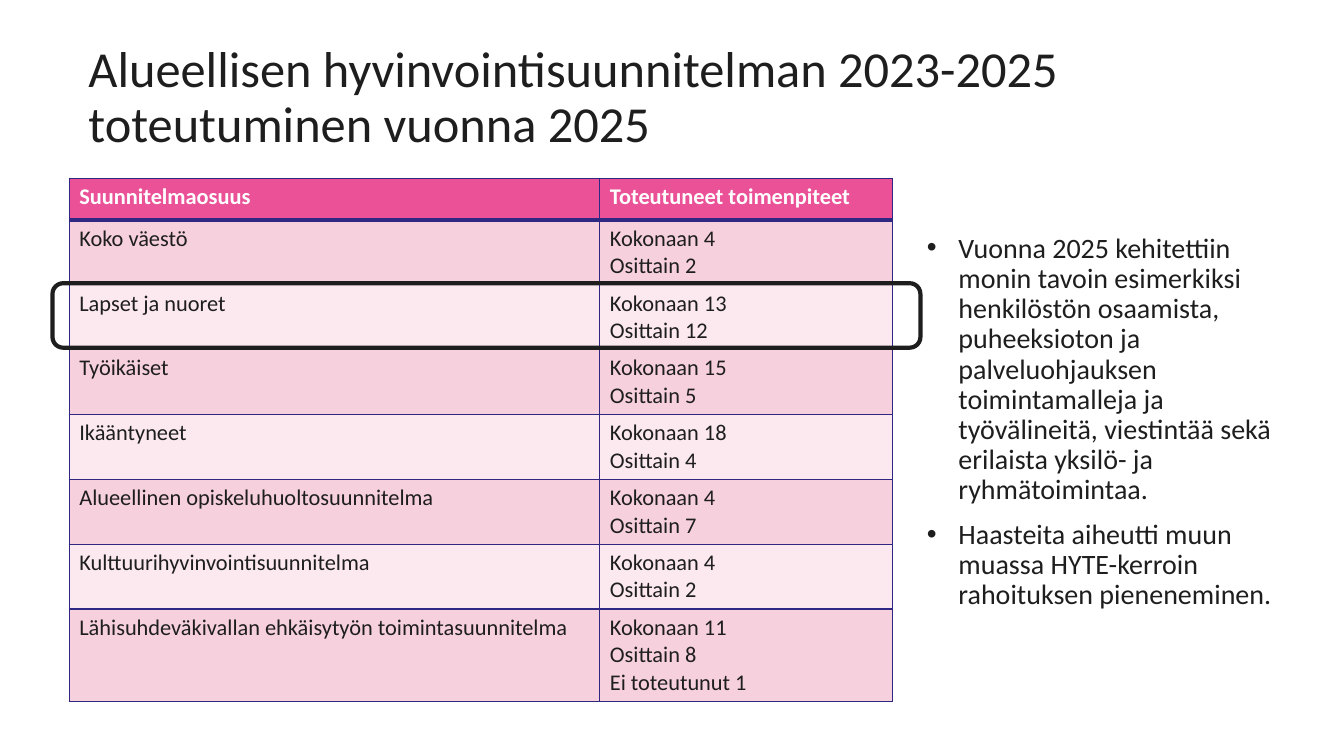
from lxml import etree
from pptx import Presentation
from pptx.dml.color import RGBColor
from pptx.enum.shapes import MSO_SHAPE as Shape
from pptx.enum.text import MSO_ANCHOR as Anchor, PP_ALIGN as Align
from pptx.oxml import parse_xml
from pptx.oxml.ns import nsdecls, qn
from pptx.util import Pt

INK, WHITE, NAVY = "1E1E1E", "FFFFFF", "302783"
HEADER, BANDS = "EA5197", ("F7D0DD", "FBE9EF")

TITLE = "Alueellisen hyvinvointisuunnitelman 2023-2025 toteutuminen vuonna 2025"
ROWS = [
    ("Suunnitelmaosuus", "Toteutuneet toimenpiteet"),
    ("Koko väestö", "Kokonaan 4\vOsittain 2"),
    ("Lapset ja nuoret", "Kokonaan 13\vOsittain 12"),
    ("Työikäiset", "Kokonaan 15\vOsittain 5"),
    ("Ikääntyneet", "Kokonaan 18\vOsittain 4"),
    ("Alueellinen opiskeluhuoltosuunnitelma", "Kokonaan 4\vOsittain 7"),
    ("Kulttuurihyvinvointisuunnitelma", "Kokonaan 4\vOsittain 2"),
    ("Lähisuhdeväkivallan ehkäisytyön toimintasuunnitelma",
     "Kokonaan 11\vOsittain 8\vEi toteutunut 1"),
]
POINTS = [
    "Vuonna 2025 kehitettiin monin tavoin esimerkiksi henkilöstön osaamista, "
    "puheeksioton ja palveluohjauksen toimintamalleja ja työvälineitä, "
    "viestintää sekä erilaista yksilö- ja ryhmätoimintaa.",
    "Haasteita aiheutti muun muassa HYTE-kerroin rahoituksen pieneneminen.",
]


def rgb(value):
    return RGBColor.from_string(value)


class Deck:
    """Style and current slide; lengths are in points."""
    font = "Calibri"

    def __init__(self, width, height):
        self.prs = Presentation()
        self.prs.slide_width, self.prs.slide_height = Pt(width), Pt(height)
        self.s = self.prs.slides.add_slide(self.prs.slide_layouts[5])

    def style(self, p, size, color=INK, bold=False):
        f = p.font
        f.name, f.size, f.bold = self.font, Pt(size), bold
        f.color.rgb = rgb(color)

    def title(self, text, x, y, w, h):
        sp = self.s.shapes.title
        sp.left, sp.top, sp.width, sp.height = Pt(x), Pt(y), Pt(w), Pt(h)
        tf = sp.text_frame
        tf.text, tf.word_wrap, tf.vertical_anchor = text, True, Anchor.BOTTOM
        p = tf.paragraphs[0]
        p.alignment, p.line_spacing = Align.LEFT, 0.9
        self.style(p, 36)

    def border(self, cell, header_edge):
        """header_edge is the side (T or B) that carries the thick rule."""
        tc_pr = cell._tc.get_or_add_tcPr()
        for i, side in enumerate("LRTB"):
            width = Pt(3 if side == header_edge else 1)
            tc_pr.insert(i, parse_xml(
                f'<a:ln{side} {nsdecls("a")} w="{width}"><a:solidFill>'
                f'<a:srgbClr val="{NAVY}"/></a:solidFill></a:ln{side}>'))

    def table(self, rows, x, y, widths, heights):
        frame = self.s.shapes.add_table(len(rows), len(widths), Pt(x), Pt(y),
                                        Pt(sum(widths)), Pt(sum(heights)))
        table = frame.table
        for col, w in zip(table.columns, widths):
            col.width = Pt(w)
        for r, (row, h) in enumerate(zip(rows, heights)):
            table.rows[r].height = Pt(h)
            for c, text in enumerate(row):
                cell = table.cell(r, c)
                self.border(cell, {0: "B", 1: "T"}.get(r))
                cell.fill.solid()
                cell.fill.fore_color.rgb = rgb(BANDS[(r - 1) % 2] if r else HEADER)
                p = cell.text_frame.paragraphs[0]
                p.text = text
                self.style(p, 16, INK if r else WHITE, bold=r == 0)

    def bullets(self, points, x, y, w, h, indent=22.5):
        tf = self.s.shapes.add_textbox(Pt(x), Pt(y), Pt(w), Pt(h)).text_frame
        tf.word_wrap = True
        for i, text in enumerate(points):
            p = tf.add_paragraph() if i else tf.paragraphs[0]
            p.text, p.line_spacing = text, 0.9
            p.space_before = Pt(10 if i else 0)
            p_pr = p._p.get_or_add_pPr()
            p_pr.set("marL", str(Pt(indent)))
            p_pr.set("indent", str(-Pt(indent)))
            etree.SubElement(p_pr, qn("a:buFont"), typeface="Arial")
            etree.SubElement(p_pr, qn("a:buChar"), char="•")
            self.style(p, 20)

    def outline(self, x, y, w, h):
        sp = self.s.shapes.add_shape(Shape.ROUNDED_RECTANGLE, Pt(x), Pt(y), Pt(w), Pt(h))
        sp.shadow.inherit = False
        sp.fill.background()
        sp.line.color.rgb, sp.line.width = rgb(INK), Pt(3)


def main():
    deck = Deck(960, 540)
    # Heading
    deck.title(TITLE, 56, 8.6, 808, 104.4)
    # Measures by plan section
    deck.table(ROWS, 49.5, 127.5, (379, 209), [29.5] + [46.25] * 6 + [66])
    # Remarks
    deck.bullets(POINTS, 655, 163.5, 262, 342.5)
    # Frame around the children and youth row
    deck.outline(37.5, 202.3, 620, 46.1)
    deck.prs.save("out.pptx")


if __name__ == "__main__":
    main()
